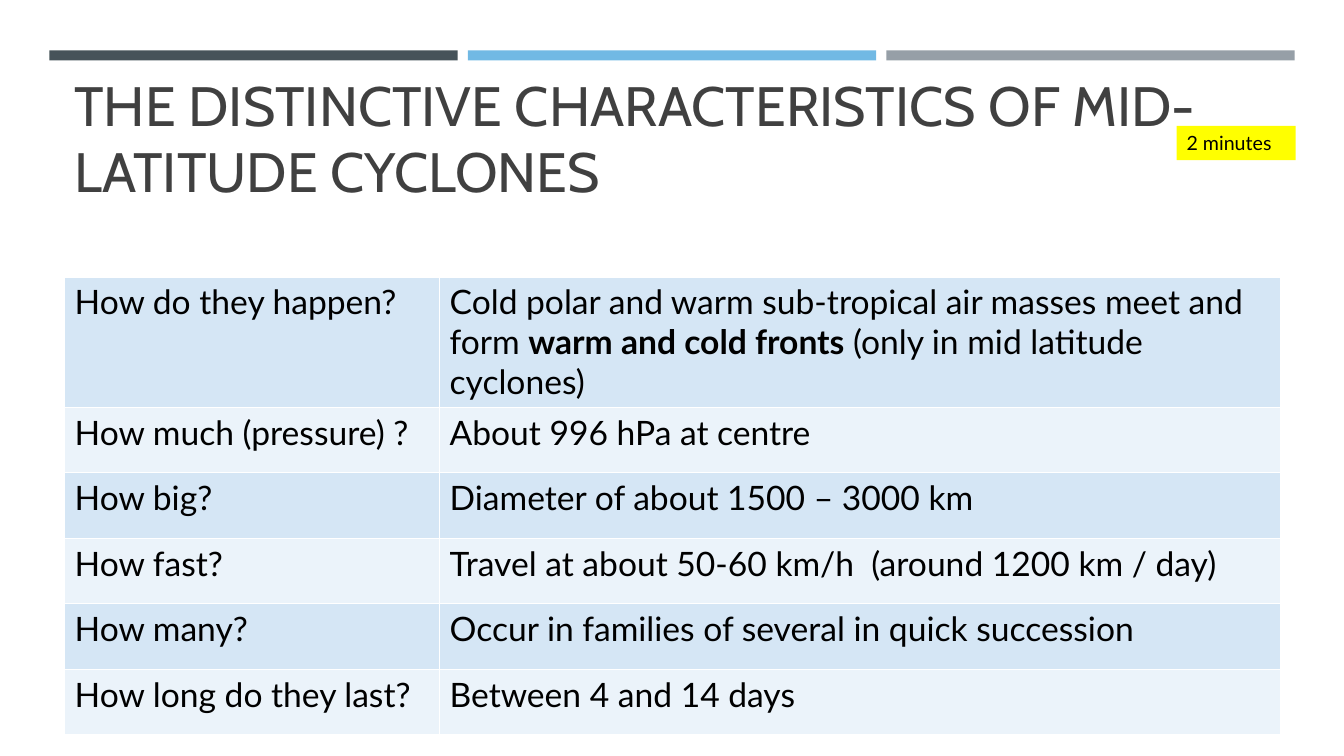
from lxml.etree import SubElement
from pptx import Presentation
from pptx.dml.color import RGBColor
from pptx.enum.shapes import MSO_SHAPE
from pptx.enum.text import MSO_ANCHOR, PP_ALIGN
from pptx.oxml.ns import qn
from pptx.util import Pt

PX = 9144  # EMU per px, 100 px to the inch
COLORS = {
    "slate": "465359", "blue": "71B9E4", "gray": "969FA7",
    "title": "404040", "text": "000000", "note": "FFFF00",
    "band_dark": "D5E6F5", "band_light": "EBF3FA", "border": "FFFFFF",
}
FACTS = [
    ("How do they happen?",
     "Cold polar and warm sub-tropical air masses meet and form "
     "**warm and cold fronts** (only in mid latitude cyclones)"),
    ("How much (pressure) ?", "About 996 hPa at centre"),
    ("How big?", "Diameter of about 1500 – 3000 km"),
    ("How fast?", "Travel at about 50-60 km/h  (around 1200 km / day)"),
    ("How many?", "Occur in families of several in quick succession"),
    ("How long do they last?", "Between 4 and 14 days"),
]


def px(*values):
    return [v * PX for v in values]


def rgb(name):
    return RGBColor.from_string(COLORS[name])


class SlideBuilder:
    heading_font = "Cabin"
    body_font = "Lato"

    def __init__(self, prs):
        self.s = prs.slides.add_slide(prs.slide_layouts[6])

    def add_text(self, tf, text, size, font, color="text"):
        """Fill the first paragraph; text between ** marks is bold."""
        p = tf.paragraphs[0]
        p.alignment = PP_ALIGN.LEFT
        p.font.size = Pt(size)
        p.font.name = font
        p.font.color.rgb = rgb(color)
        for i, part in enumerate(text.split("**")):
            r = p.add_run()
            r.text = part
            if i % 2:
                r.font.bold = True

    def rect(self, x, y, w, h, fill):
        sp = self.s.shapes.add_shape(MSO_SHAPE.RECTANGLE, *px(x, y, w, h))
        sp.shadow.inherit = False
        sp.fill.solid()
        sp.fill.fore_color.rgb = rgb(fill)
        sp.line.fill.background()
        return sp

    def title(self, x, y, w, h, text):
        tf = self.s.shapes.add_textbox(*px(x, y, w, h)).text_frame
        tf.word_wrap = True
        tf.vertical_anchor = MSO_ANCHOR.BOTTOM
        self.add_text(tf, text, 39.6, self.heading_font, "title")

    def note(self, x, y, w, h, text):
        tf = self.rect(x, y, w, h, "note").text_frame
        tf.vertical_anchor = MSO_ANCHOR.TOP
        self.add_text(tf, text, 14, self.body_font)

    def borders(self, cell, bottom):
        tcPr = cell._tc.get_or_add_tcPr()
        widths = {"a:lnL": 1, "a:lnR": 1, "a:lnT": 1, "a:lnB": bottom}
        for tag, width in widths.items():
            ln = SubElement(tcPr, qn(tag), w=str(Pt(width)))
            fill = SubElement(ln, qn("a:solidFill"))
            SubElement(fill, qn("a:srgbClr"), val=COLORS["border"])

    def table(self, x, y, cols, rows, facts):
        """Draw an empty header row, then one banded row per fact."""
        frame = self.s.shapes.add_table(
            len(rows), len(cols), *px(x, y, sum(cols), sum(rows)))
        tbl = frame.table
        for col, width in zip(tbl.columns, px(*cols)):
            col.width = width
        for row, height in zip(tbl.rows, px(*rows)):
            row.height = height
        for cell in tbl.rows[0].cells:
            self.borders(cell, 3)
            cell.fill.background()
        for i, fact in enumerate(facts, 1):
            for cell, text in zip(tbl.rows[i].cells, fact):
                self.borders(cell, 1)
                cell.fill.solid()
                cell.fill.fore_color.rgb = rgb("band_dark" if i % 2 else "band_light")
                self.add_text(cell.text_frame, text, 24, self.body_font)


def main():
    prs = Presentation()
    prs.slide_width, prs.slide_height = px(1333, 750)
    b = SlideBuilder(prs)

    # Top bars
    for i, color in enumerate(("slate", "blue", "gray")):
        b.rect(49 + i * 415, 50, 405, 10, color)

    # Title
    b.title(64, 77, 1206, 130,
            "THE DISTINCTIVE CHARACTERISTICS OF MID-LATITUDE CYCLONES")

    # Facts table
    b.table(64, 220, [372, 834], [54, 128] + [65] * 5, FACTS)

    # Time note
    b.note(1167, 125, 118, 34, "2 minutes")

    prs.save("out.pptx")


if __name__ == "__main__":
    main()
